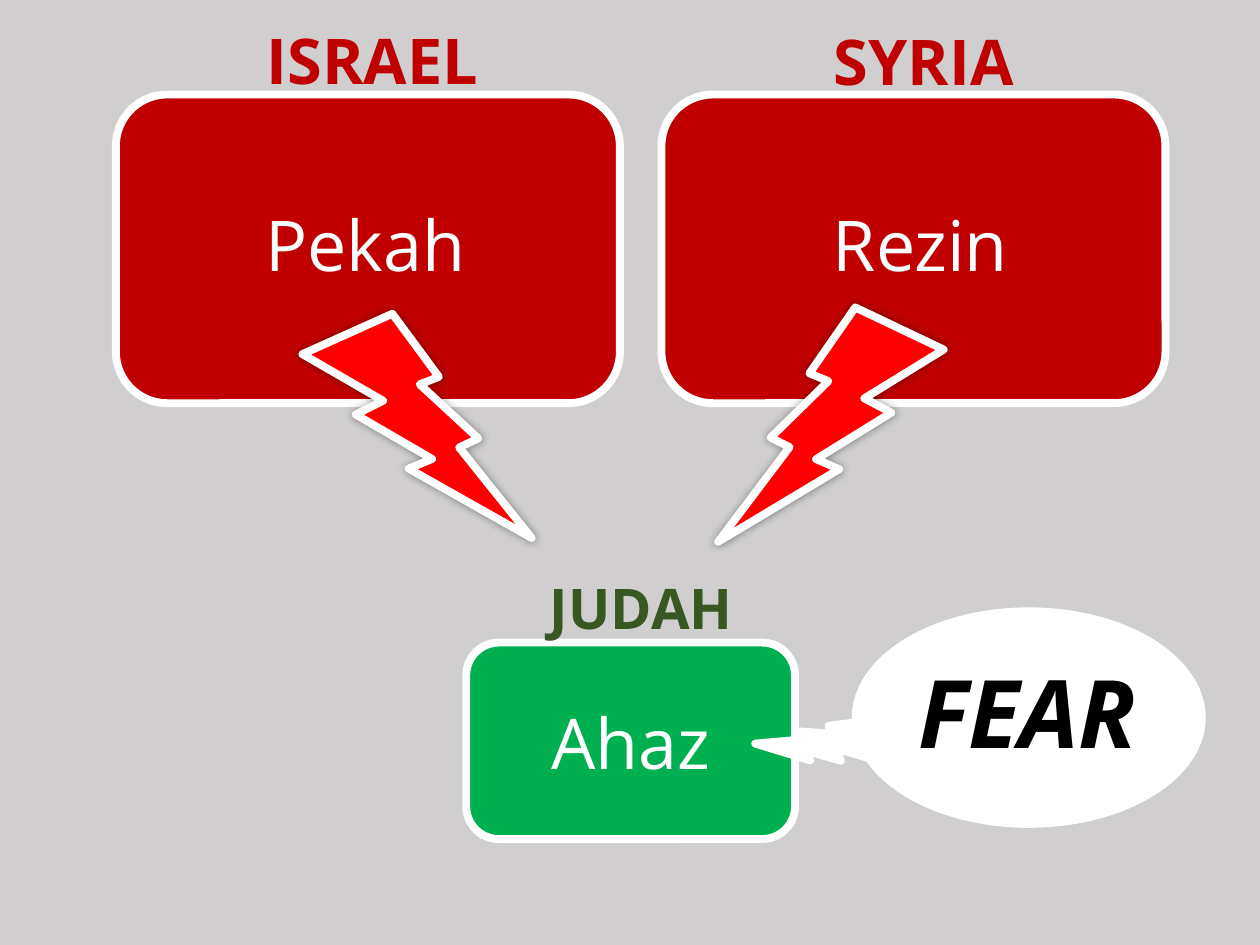
from lxml import etree
from pptx import Presentation
from pptx import util as u
from pptx.dml.color import RGBColor
from pptx.enum import shapes, text
from pptx.oxml.ns import qn

GREY = RGBColor(0xD0, 0xCE, 0xCE)
WHITE = RGBColor(0xFF, 0xFF, 0xFF)
BLACK = RGBColor(0x00, 0x00, 0x00)
CRIMSON = RGBColor(0xC0, 0x00, 0x00)
RED = RGBColor(0xFF, 0x00, 0x00)
GREEN = RGBColor(0x00, 0xB0, 0x50)
DARK_GREEN = RGBColor(0x38, 0x57, 0x23)
KIND = shapes.MSO_SHAPE

prs = Presentation()
prs.slide_width, prs.slide_height = u.Inches(10), u.Inches(7.5)
COL, ROW = prs.slide_width / 100, prs.slide_height / 75
s = prs.slides.add_slide(prs.slide_layouts[6])


def add_block(kind, x, y, w, h, fill, outlined=True):
    sp = s.shapes.add_shape(kind, int(x * COL), int(y * ROW), int(w * COL), int(h * ROW))
    sp.shadow.inherit = False
    sp.fill.solid()
    sp.fill.fore_color.rgb = fill
    if outlined:
        sp.line.color.rgb = WHITE
        sp.line.width = u.Pt(4.5)
    else:
        sp.line.fill.background()
    return sp


def add_label(words, x, y, w, h, size, color, bold=False, italic=False):
    sp = s.shapes.add_textbox(int(x * COL), int(y * ROW), int(w * COL), int(h * ROW))
    tf = sp.text_frame
    tf.word_wrap = True
    tf.auto_size = text.MSO_AUTO_SIZE.SHAPE_TO_FIT_TEXT
    p = tf.paragraphs[0]
    p.alignment = text.PP_ALIGN.CENTER
    r = p.add_run()
    r.text = words
    r.font.name = "Open Sans"
    r.font.size = u.Pt(size)
    r.font.color.rgb = color
    r.font.bold, r.font.italic = bold, italic


add_block(KIND.RECTANGLE, 0, 0, 100, 75, GREY, outlined=False)

add_block(KIND.ROUNDED_RECTANGLE, 37, 51, 26.1, 15.6, GREEN)
add_label("Ahaz", 37.9, 55, 24.3, 7.7, 40, WHITE)
add_label("JUDAH", 41.8, 45, 18.2, 6.4, 32, DARK_GREEN, bold=True)

kingdoms = [
    (9.2, ("Pekah", 13, 15.5, 32, 7.7), ("ISRAEL", 19.5, 1.2, 20.1, 7.1)),
    (52.5, ("Rezin", 57.7, 15.5, 30.7, 7.7), ("SYRIA", 64.2, 1.3, 18.2, 7.1)),
]
for left, king, country in kingdoms:
    add_block(KIND.ROUNDED_RECTANGLE, left, 7.5, 40, 24.5, CRIMSON)
    add_label(*king, 40, WHITE)
    add_label(*country, 36, CRIMSON, bold=True)

israel_bolt = add_block(KIND.LIGHTNING_BOLT, 24, 24.9, 18.2, 17.8, RED)
syria_bolt = add_block(KIND.LIGHTNING_BOLT, 57, 24.4, 17.9, 18.6, RED)
for bolt in (israel_bolt, syria_bolt):
    effects = bolt.element.spPr.find(qn("a:effectLst"))
    shadow = etree.SubElement(effects, qn("a:outerShdw"), blurRad=str(u.Pt(5)), dist="0", dir="0")
    tint = etree.SubElement(shadow, qn("a:srgbClr"), val=str(BLACK))
    etree.SubElement(tint, qn("a:alpha"), val="40000")

add_block(KIND.OVAL, 67.6, 48.2, 28.1, 17.5, WHITE, outlined=False)
fear_bolt = add_block(KIND.LIGHTNING_BOLT, 61.4, 55.6, 7.4, 7.2, WHITE)
fear_bolt.rotation = 46.3
for bolt in (syria_bolt, fear_bolt):
    bolt.element.spPr.find(qn("a:xfrm")).set("flipH", "1")
add_label("FEAR", 69.4, 51.4, 24.3, 10.1, 54, BLACK, bold=True, italic=True)

prs.save("out.pptx")
